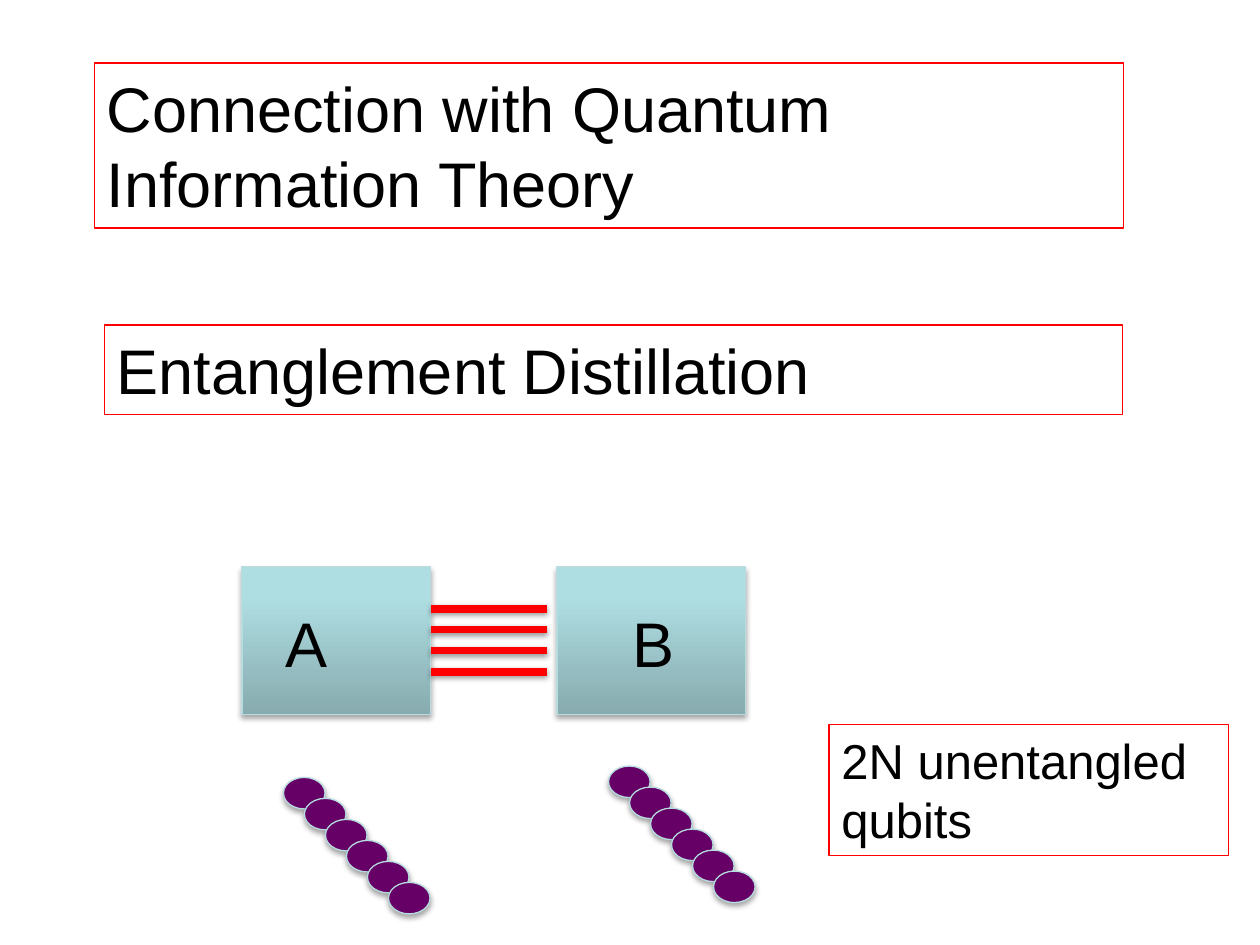
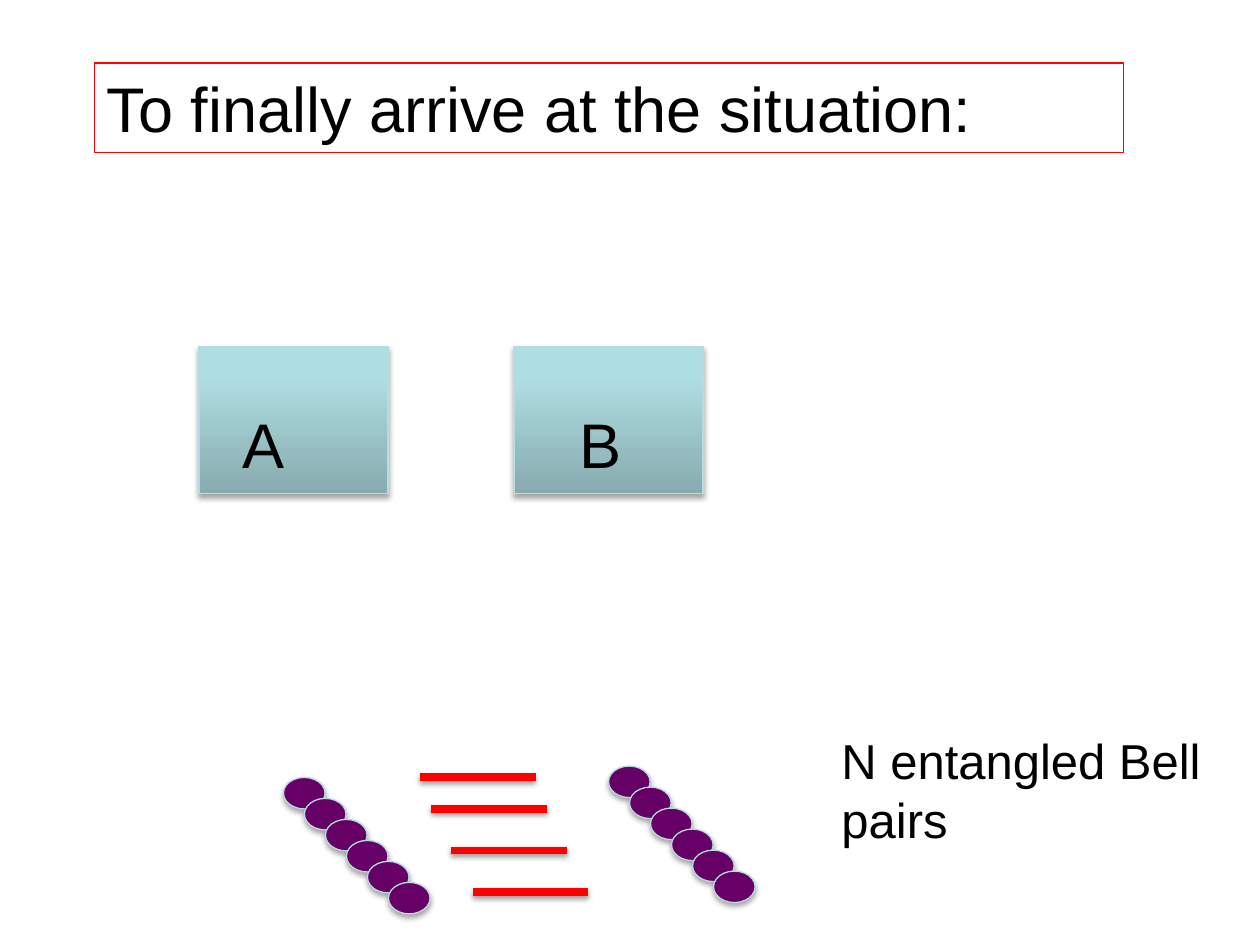
"""Build two slides on entanglement distillation."""
from copy import deepcopy

from lxml.etree import SubElement
from pptx import Presentation
from pptx.dml.color import RGBColor
from pptx.enum.shapes import MSO_CONNECTOR as CONN, MSO_SHAPE as SHAPE
from pptx.enum.text import MSO_AUTO_SIZE as AUTO
from pptx.oxml.ns import qn
from pptx.util import Inches, Pt

BLACK = RGBColor(0x00, 0x00, 0x00)
RED = RGBColor(0xFF, 0x00, 0x00)
PURPLE = RGBColor(0x66, 0x00, 0x66)
EDGE = RGBColor(0xB6, 0xDC, 0xDF)
BOX_STOPS = [(0, RGBColor(0x87, 0xAB, 0xAE)),
             (0.8, RGBColor(0xAF, 0xDE, 0xE2)),
             (1, RGBColor(0xAF, 0xE0, 0xE4))]
STEP = 1 / 6
LINK_W = 0.92
BOX_GAP = 2.5


def add_shadow(sp, alpha, dist):
    """Give a shape or connector a soft shadow straight below it."""
    spPr = sp._element.spPr
    effects = spPr.find(qn("a:effectLst"))
    if effects is None:
        effects = SubElement(spPr, qn("a:effectLst"))
    shadow = SubElement(effects, qn("a:outerShdw"), blurRad=str(Pt(3.1)),
                        dist=str(Pt(dist)), dir="5400000", rotWithShape="0")
    color = SubElement(shadow, qn("a:srgbClr"), val=str(BLACK))
    SubElement(color, qn("a:alpha"), val=str(alpha * 1000))


def set_line(sp, color, width):
    """Set the colour and width of an outline or connector."""
    sp.line.color.rgb = color
    sp.line.width = Pt(width)


def add_text(slide, text, x, y, w, h, size=36, framed=False):
    """Add a text box, with a thin red frame if asked."""
    sp = slide.shapes.add_textbox(Inches(x), Inches(y), Inches(w), Inches(h))
    if framed:
        set_line(sp, RED, 0.75)
    tf = sp.text_frame
    tf.word_wrap = True
    tf.auto_size = AUTO.SHAPE_TO_FIT_TEXT
    r = tf.paragraphs[0].add_run()
    r.text = text
    for name, value in {"name": "Arial", "size": Pt(size)}.items():
        setattr(r.font, name, value)
    r.font.color.rgb = BLACK


def add_solid(slide, kind, x, y, w, h):
    """Add a shadowed shape with a pale edge and return it."""
    sp = slide.shapes.add_shape(kind, Inches(x), Inches(y), Inches(w), Inches(h))
    set_line(sp, EDGE, 0.75)
    sp.shadow.inherit = False
    add_shadow(sp, 35, 1.8)
    return sp


def add_box(slide, x, y):
    """Add one party's box with its vertical gradient."""
    sp = add_solid(slide, SHAPE.RECTANGLE, x, y, 1.5, 1.17)
    sp.fill.gradient()
    sp.fill.gradient_angle = 90
    stops = sp._element.spPr.find(".//" + qn("a:gsLst"))
    stops.insert(1, deepcopy(stops[0]))
    for stop, (position, color) in zip(sp.fill.gradient_stops, BOX_STOPS):
        stop.position = position
        stop.color.rgb = color


def add_parties(slide, x, y, label_y, b_x):
    """Add the boxes of A and B, then their labels."""
    for i in range(2):
        add_box(slide, x + i * BOX_GAP, y)
    add_text(slide, "A", x + 0.25, label_y, 0.92, 0.71)
    add_text(slide, "B", b_x, label_y, 0.75, 0.71)


def add_links(slide, starts):
    """Add equally long red entanglement lines from the given points."""
    for x, y in starts:
        ln = slide.shapes.add_connector(CONN.STRAIGHT, Inches(x), Inches(y),
                                        Inches(x + LINK_W), Inches(y))
        set_line(ln, RED, 4.5)
        add_shadow(ln, 38, 1.6)


def add_qubit_chains(slide):
    """Add the two diagonal chains of six qubits."""
    for x, y in [(2.25, 6.17), (4.83, 6.08)]:
        for i in range(6):
            sp = add_solid(slide, SHAPE.OVAL, x + i * STEP, y + i * STEP, 0.33, 0.25)
            sp.fill.solid()
            sp.fill.fore_color.rgb = PURPLE


def add_caption(slide, text, framed=False):
    """Add the caption at the lower right."""
    add_text(slide, text, 6.58, 5.75, 3.17, 1.04, 28, framed)


def build_start(slide):
    """Show the unentangled qubits beside two linked boxes."""
    add_text(slide, "Connection with Quantum Information Theory",
             0.75, 0.5, 8.17, 1.31, framed=True)
    add_text(slide, "Entanglement Distillation", 0.83, 2.58, 8.08, 0.71, framed=True)
    add_parties(slide, 1.92, 4.5, 4.75, 4.92)
    add_links(slide, [(3.42, 4.83 + i * STEP) for i in range(4)])
    add_qubit_chains(slide)
    add_caption(slide, "2N unentangled qubits", framed=True)


def build_result(slide):
    """Show the Bell pairs beside two unlinked boxes."""
    add_text(slide, "To finally arrive at the situation:",
             0.75, 0.5, 8.17, 0.71, framed=True)
    add_parties(slide, 1.58, 2.75, 3.17, 4.5)
    add_links(slide, [(3.33, 6.17), (3.42, 6.42), (3.58, 6.75), (3.75, 7.08)])
    add_qubit_chains(slide)
    add_caption(slide, "N entangled Bell pairs")


def main():
    """Build and save the presentation."""
    prs = Presentation()
    prs.slide_width, prs.slide_height = Inches(10), Inches(7.5)
    for build in (build_start, build_result):
        build(prs.slides.add_slide(prs.slide_layouts[6]))
    prs.save("out.pptx")


if __name__ == "__main__":
    main()
